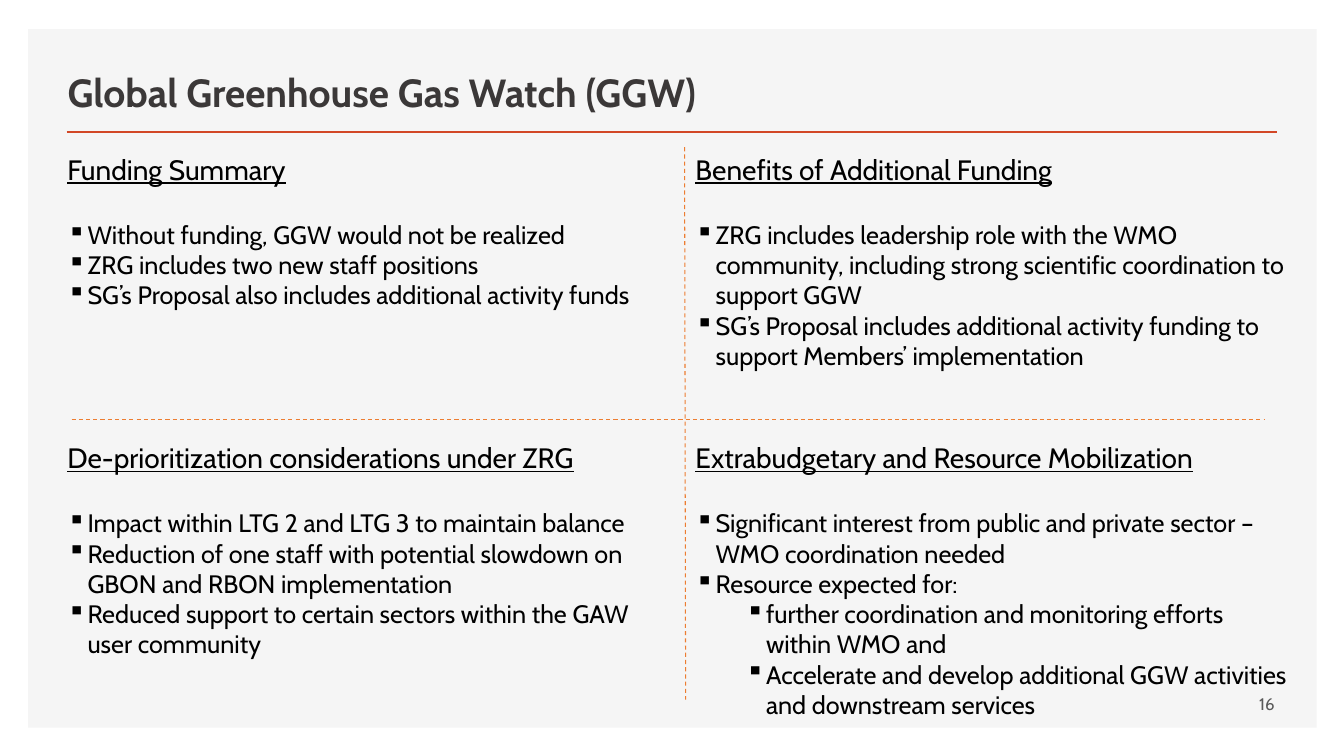
import pptx
import pptx.dml.color
import pptx.enum.dml
import pptx.enum.shapes
import pptx.enum.text
import pptx.oxml
import pptx.oxml.ns
import pptx.util
from typing import NamedTuple

Inches = pptx.util.Inches
Align = pptx.enum.text.PP_ALIGN
Anchor = pptx.enum.text.MSO_ANCHOR
FONT = "Cabin"
BLACK = "000000"
ACCENT = "ED7D31"


class Item(NamedTuple):
    text: str
    level: int = 0


class Panel(NamedTuple):
    left: float
    top: float
    head: str
    items: list[Item]


class Rule(NamedTuple):
    start: tuple[float, float]
    end: tuple[float, float]
    color: str
    width: float
    dash: bool


LEFT, RIGHT = 0.57, 6.8
UPPER, LOWER = 1.46, 4.32

PANELS = [
    Panel(LEFT, UPPER, "Funding Summary", [
        Item("Without funding, GGW would not be realized"),
        Item("ZRG includes two new staff positions"),
        Item("SG’s Proposal also includes additional activity funds"),
    ]),
    Panel(LEFT, LOWER, "De-prioritization considerations under ZRG", [
        Item("Impact within LTG 2 and LTG 3 to maintain balance"),
        Item("Reduction of one staff with potential slowdown on GBON and RBON implementation"),
        Item("Reduced support to certain sectors within the GAW user community"),
    ]),
    Panel(RIGHT, UPPER, "Benefits of Additional Funding", [
        Item("ZRG includes leadership role with the WMO community, including strong "
             "scientific coordination to support GGW"),
        Item("SG’s Proposal includes additional activity funding to support "
             "Members’ implementation"),
    ]),
    Panel(RIGHT, LOWER, "Extrabudgetary and Resource Mobilization", [
        Item("Significant interest from public and private sector – WMO coordination needed"),
        Item("Resource expected for:"),
        Item("further coordination and monitoring efforts within WMO and", 1),
        Item("Accelerate and develop additional GGW activities and downstream services", 1),
    ]),
]

RULES = [
    Rule((0.66, 1.31), (12.67, 1.31), "D24726", 2, False),
    Rule((6.79, 1.46), (6.8, 6.94), ACCENT, 0.75, True),
    Rule((0.71, 4.16), (12.54, 4.16), ACCENT, 0.75, True),
]


def rgb(code: str) -> pptx.dml.color.RGBColor:
    return pptx.dml.color.RGBColor.from_string(code)


def write(para, text: str, *, size: float, color: str = BLACK, bold: bool = False,
          under: bool = False, align=Align.LEFT, after: float = 0) -> None:
    para.alignment = align
    para.space_before = pptx.util.Pt(0)
    para.space_after = pptx.util.Pt(after)
    run = para.add_run()
    run.text = text
    font = run.font
    font.name = FONT
    font.size = pptx.util.Pt(size)
    font.bold = bold
    font.underline = under
    font.color.rgb = rgb(color)


def bullet(para, level: int) -> None:
    para.level = level
    props = para._p.get_or_add_pPr()
    props.set("marL", str(Inches(0.2 + 0.5 * level)))
    props.set("indent", str(Inches(-0.2)))
    mark = pptx.oxml.parse_xml(
        f'<a:buChar {pptx.oxml.ns.nsdecls("a")} char="▪"/>')
    props.append(mark)


def add_box(slide, left: float, top: float, width: float, height: float):
    box = slide.shapes.add_textbox(
        Inches(left), Inches(top), Inches(width), Inches(height))
    box.text_frame.word_wrap = True
    return box.text_frame


def add_panel(slide, panel: Panel) -> None:
    frame = add_box(slide, panel.left, panel.top, 6.1, 2.63)
    write(frame.paragraphs[0], panel.head, size=20, under=True, after=24)
    for item in panel.items:
        para = frame.add_paragraph()
        write(para, item.text, size=18)
        bullet(para, item.level)


def add_rule(slide, rule: Rule) -> None:
    line = slide.shapes.add_connector(
        pptx.enum.shapes.MSO_CONNECTOR.STRAIGHT,
        *map(Inches, rule.start + rule.end))
    line.line.color.rgb = rgb(rule.color)
    line.line.width = pptx.util.Pt(rule.width)
    if rule.dash:
        line.line.dash_style = pptx.enum.dml.MSO_LINE.DASH
    line._element.spPr.append(pptx.oxml.parse_xml(
        f'<a:effectLst {pptx.oxml.ns.nsdecls("a")}/>'))


def add_back(slide) -> None:
    back = slide.shapes.add_shape(
        pptx.enum.shapes.MSO_SHAPE.RECTANGLE,
        Inches(0.28), Inches(0.29), Inches(12.78), Inches(6.93))
    back.shadow.inherit = False
    back.fill.solid()
    back.fill.fore_color.rgb = rgb("F5F5F5")
    back.line.fill.background()
    tree = slide.shapes._spTree
    tree.remove(back._element)
    tree.insert(2, back._element)


def set_title(slide, text: str) -> None:
    title = slide.shapes.title
    title.left, title.top = Inches(LEFT), Inches(0.49)
    title.width, title.height = Inches(11.38), Inches(0.7)
    frame = title.text_frame
    frame.vertical_anchor = Anchor.BOTTOM
    write(frame.paragraphs[0], text, size=28, color="3B3838", bold=True)


def main() -> None:
    deck = pptx.Presentation()
    deck.slide_width, deck.slide_height = Inches(13.33), Inches(7.5)
    slide = deck.slides.add_slide(deck.slide_layouts[5])
    add_back(slide)
    set_title(slide, "Global Greenhouse Gas Watch (GGW)")
    number = add_box(slide, 9.16, 6.78, 3.58, 0.4)
    number.vertical_anchor = Anchor.MIDDLE
    write(number.paragraphs[0], "16", size=12, color="595959", align=Align.RIGHT)
    for panel in PANELS:
        add_panel(slide, panel)
    for rule in RULES:
        add_rule(slide, rule)
    deck.save("out.pptx")


if __name__ == "__main__":
    main()
